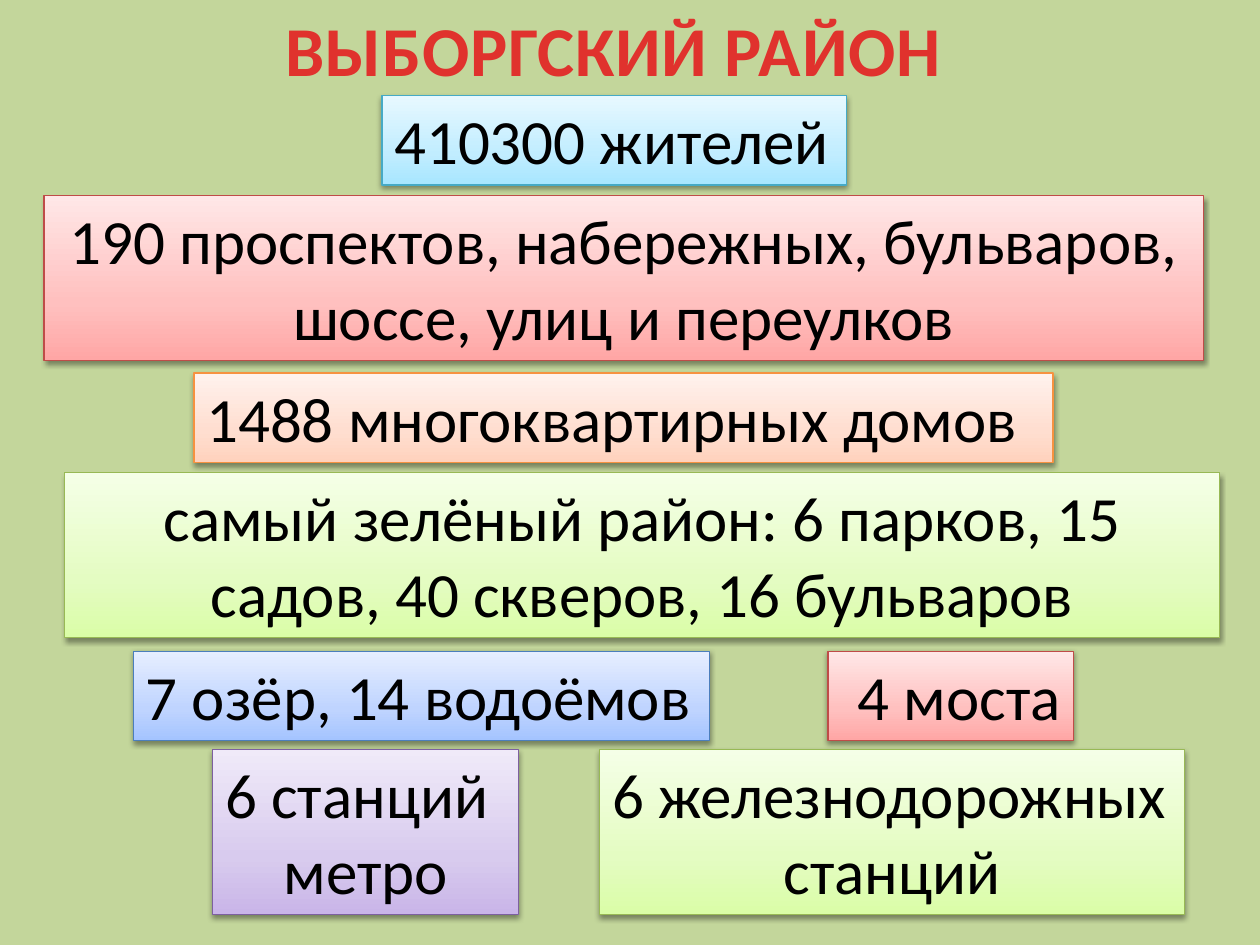
"""Build a slide of facts about the Vyborgsky district."""
from lxml.etree import SubElement
from pptx import Presentation
from pptx.dml.color import RGBColor
from pptx.enum.shapes import MSO_SHAPE
from pptx.enum.text import MSO_ANCHOR, PP_ALIGN as Align
from pptx.oxml.ns import qn
from pptx.util import Cm, Pt

FONT = "Calibri"
TITLE = "ВЫБОРГСКИЙ РАЙОН"
COLORS = {"background": "C3D69B", "text": "000000", "shadow": "000000"}
TITLE_STOPS = [(25, "E0322D"), (100, "A2201C")]
THEMES = {
    "blue": ("4B7EBC", "A4C4FF", "BFD4FF", "E6EEFF"),
    "green": ("98B955", "DAFDA7", "E4FCC2", "F5FFE7"),
    "aqua": ("46AAC5", "A7E6FF", "C1EDFF", "E7F8FF"),
    "red": ("BF4C48", "FFA6A5", "FFC0BF", "FFE7E7"),
    "orange": ("F69240", "FFD2BD", "FFDED0", "FFF2ED"),
    "purple": ("7D60A0", "C9B5E8", "D8CBEE", "F0EAF9"),
}
STOP_POSITIONS = (0, 35, 100)
LEFT, CENTER, RIGHT = Align.LEFT, Align.CENTER, Align.RIGHT

# left, top, width, text lines tall, theme, paragraphs
FACTS = [
    (7.7, 1.93, 9.37, 1, "aqua", [("410300 жителей", LEFT)]),
    (0.89, 3.94, 23.37, 2, "red", [
        ("190 проспектов, набережных, бульваров,", CENTER),
        ("шоссе, улиц и переулков", CENTER)]),
    (3.91, 7.52, 17.32, 1, "orange", [("1488 многоквартирных домов", LEFT)]),
    (1.3, 9.53, 23.29, 2, "green", [
        ("самый зелёный район: 6 парков, 15 садов, 40 скверов, 16 бульваров", CENTER)]),
    (2.69, 13.13, 11.61, 1, "blue", [("7 озёр, 14 водоёмов", LEFT)]),
    (16.69, 13.13, 4.95, 1, "red", [("4 моста", RIGHT)]),
    (4.29, 15.11, 6.17, 2, "purple", [("6 станций", LEFT), ("метро", CENTER)]),
    (12.09, 15.11, 11.79, 2, "green", [("6 железнодорожных", LEFT), ("станций", CENTER)]),
]
LINE_HEIGHT, PADDING = 1.53, 0.27


def set_gradient(fill, stops, angle):
    fill.gradient()
    fill.gradient_angle = angle
    stop_list = fill._xPr.find(qn("a:gradFill")).find(qn("a:gsLst"))
    for stop in list(stop_list):
        stop_list.remove(stop)
    for position, color in stops:
        stop = SubElement(stop_list, qn("a:gs"), pos=str(position * 1000))
        SubElement(stop, qn("a:srgbClr"), val=color)


def add_shadow(shape):
    shape.shadow.inherit = False
    effects = shape._element.spPr.find(qn("a:effectLst"))
    shadow = SubElement(effects, qn("a:outerShdw"), blurRad=str(Pt(3.1)),
                        dist=str(Pt(1.6)), dir="5400000", rotWithShape="0")
    color = SubElement(shadow, qn("a:srgbClr"), val=COLORS["shadow"])
    SubElement(color, qn("a:alpha"), val="38000")


def add_title(slide):
    box = slide.shapes.add_textbox(Cm(5.51), Cm(0), Cm(13.79), Cm(1.96))
    box.text_frame.word_wrap = True
    para = box.text_frame.paragraphs[0]
    span = para.add_run()
    span.text = TITLE
    font = span.font
    font.name, font.size, font.bold = FONT, Pt(40), True
    set_gradient(font.fill, TITLE_STOPS, 270)
    span._r.get_or_add_rPr().set("spc", "50")


def add_fact(slide, left, top, width, lines, theme, paragraphs):
    height = PADDING + LINE_HEIGHT * lines
    box = slide.shapes.add_shape(MSO_SHAPE.RECTANGLE, Cm(left), Cm(top), Cm(width), Cm(height))
    border, *shades = THEMES[theme]
    set_gradient(box.fill, zip(STOP_POSITIONS, shades), 90)
    box.line.color.rgb = RGBColor.from_string(border)
    box.line.width = Pt(0.75)
    add_shadow(box)
    frame = box.text_frame
    frame.word_wrap = True
    frame.vertical_anchor = MSO_ANCHOR.TOP
    for index, (text, alignment) in enumerate(paragraphs):
        para = frame.add_paragraph() if index else frame.paragraphs[0]
        para.text, para.alignment = text, alignment
        para.font.name, para.font.size = FONT, Pt(36)
        para.font.color.rgb = RGBColor.from_string(COLORS["text"])


def main():
    deck = Presentation()
    deck.slide_width, deck.slide_height = Cm(25.4), Cm(19.05)
    slide = deck.slides.add_slide(deck.slide_layouts[6])
    background = slide.background.fill
    background.solid()
    background.fore_color.rgb = RGBColor.from_string(COLORS["background"])
    add_title(slide)
    for fact in FACTS:
        add_fact(slide, *fact)
    deck.save("out.pptx")


if __name__ == "__main__":
    main()
